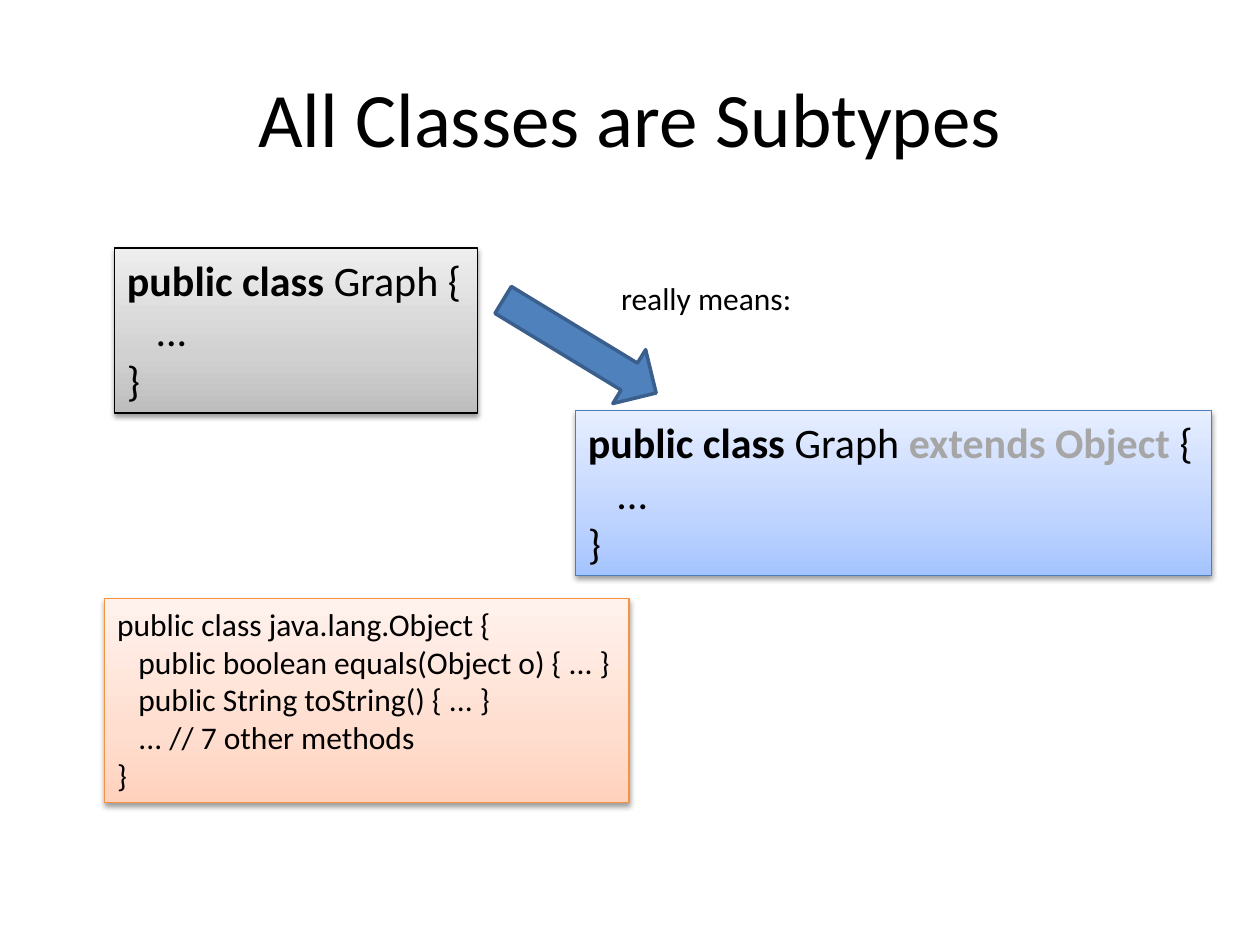
from lxml.etree import SubElement
from pptx import Presentation
from pptx.dml.color import RGBColor
from pptx.enum.shapes import MSO_SHAPE
from pptx.enum.text import MSO_ANCHOR, MSO_AUTO_SIZE, PP_ALIGN
from pptx.oxml.ns import qn
from pptx.util import Cm, Pt

BLACK = RGBColor(0x00, 0x00, 0x00)
MUTED = RGBColor(0xA6, 0xA6, 0xA6)
ARROW_FILL = RGBColor(0x4F, 0x81, 0xBD)
ARROW_LINE = RGBColor(0x3A, 0x5F, 0x8C)
BLUE_LINE = RGBColor(0x4B, 0x7E, 0xBC)
ORANGE_LINE = RGBColor(0xF6, 0x92, 0x40)
GRAYS = [RGBColor(0xBD, 0xBD, 0xBD), RGBColor(0xD1, 0xD1, 0xD1), RGBColor(0xEE, 0xEE, 0xEE)]
BLUES = [RGBColor(0xA4, 0xC4, 0xFF), RGBColor(0xBF, 0xD4, 0xFF), RGBColor(0xE6, 0xEE, 0xFF)]
ORANGES = [RGBColor(0xFF, 0xD2, 0xBD), RGBColor(0xFF, 0xDE, 0xD0), RGBColor(0xFF, 0xF2, 0xED)]
STOP_POSITIONS = [0, 35000, 100000]


def add_text(page, place, size, lines):
    box = page.shapes.add_textbox(*[Cm(length) for length in place])
    frame = box.text_frame
    frame.word_wrap = False
    frame.auto_size = MSO_AUTO_SIZE.SHAPE_TO_FIT_TEXT
    for number, (indent, spans) in enumerate(lines):
        para = frame.add_paragraph() if number else frame.paragraphs[0]
        para.font.name = "Calibri"
        para.font.size = Pt(size)
        if indent:
            para._p.get_or_add_pPr().set("marL", str(Cm(size * 0.024)))
        for text, bold, color in spans:
            span = para.add_run()
            span.text = text
            span.font.bold = bold
            span.font.color.rgb = color
    return box


def decorate(box, colors, line_color):
    box.fill.gradient()
    box.fill.gradient_angle = 90
    stops = box.fill._fill._gradFill.find(qn("a:gsLst"))
    for stop in list(stops):
        stops.remove(stop)
    for position, color in zip(STOP_POSITIONS, colors):
        stop = SubElement(stops, qn("a:gs"), pos=str(position))
        SubElement(stop, qn("a:srgbClr"), val=str(color))
    box.line.color.rgb = line_color
    box.line.width = Pt(0.75)
    box.shadow.inherit = False
    effects = box._element.spPr.find(qn("a:effectLst"))
    shadow = SubElement(effects, qn("a:outerShdw"), blurRad="40000", dist="20000",
                        dir="5400000", rotWithShape="0")
    shade = SubElement(shadow, qn("a:srgbClr"), val=str(BLACK))
    SubElement(shade, qn("a:alpha"), val="38000")


deck = Presentation()
deck.slide_width = Cm(25.4)
deck.slide_height = Cm(19.05)
page = deck.slides.add_slide(deck.slide_layouts[5])

title = page.shapes.title
title.left, title.top, title.width, title.height = Cm(1.27), Cm(0.76), Cm(22.86), Cm(3.18)
title.text_frame.text = "All Classes are Subtypes"
title.text_frame.vertical_anchor = MSO_ANCHOR.MIDDLE
heading = title.text_frame.paragraphs[0]
heading.alignment = PP_ALIGN.CENTER
heading.font.name = "Calibri"
heading.font.size = Pt(44)
heading.font.color.rgb = BLACK

class_body = [(True, [("...", False, BLACK)]), (False, [("}", False, BLACK)])]
short_header = [("public class ", True, BLACK), ("Graph {", False, BLACK)]
full_header = [("public class ", True, BLACK), ("Graph ", False, BLACK),
               ("extends Object", True, MUTED), (" {", False, BLACK)]
object_lines = [
    (False, "public class java.lang.Object {"),
    (True, "public boolean equals(Object o) { ... }"),
    (True, "public String toString() { ... }"),
    (True, "... // 7 other methods"),
    (False, "}"),
]
object_class = [(indent, [(text, False, BLACK)]) for indent, text in object_lines]

code_boxes = [
    ((2.31, 5, 7.32, 3.33), 24, [(False, short_header)] + class_body, GRAYS, BLACK),
    ((11.6, 8.28, 12.83, 3.33), 24, [(False, full_header)] + class_body, BLUES, BLUE_LINE),
    ((2.11, 12.07, 10.57, 4.11), 18, object_class, ORANGES, ORANGE_LINE),
]
for place, size, lines, colors, line_color in code_boxes:
    decorate(add_text(page, place, size, lines), colors, line_color)

arrow = page.shapes.add_shape(MSO_SHAPE.RIGHT_ARROW, Cm(9.88), Cm(6.35), Cm(3.61), Cm(1.27))
arrow.rotation = 31.3
arrow.shadow.inherit = False
arrow.fill.solid()
arrow.fill.fore_color.rgb = ARROW_FILL
arrow.line.color.rgb = ARROW_LINE
arrow.line.width = Pt(2)

add_text(page, (12.27, 5.51, 3.99, 1.02), 18, [(False, [("really means:", False, BLACK)])])

deck.save("out.pptx")
